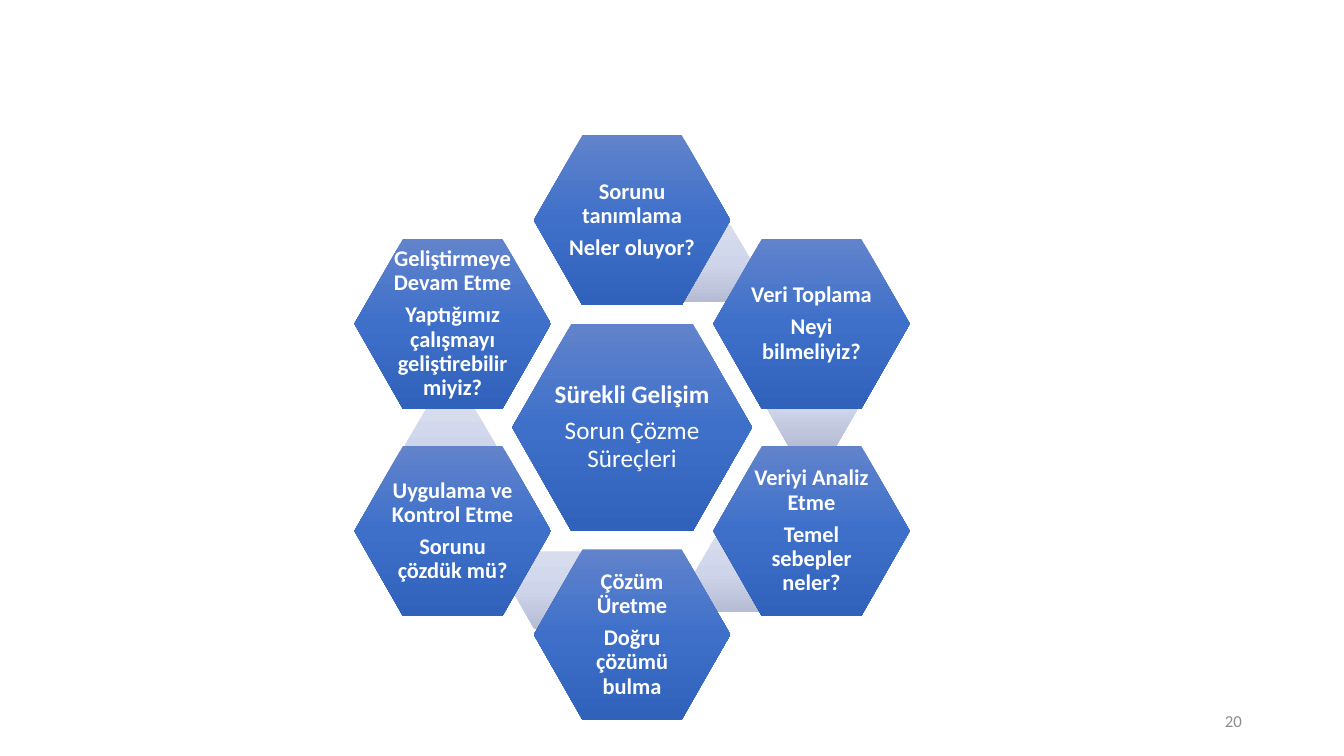
"""Build a slide showing the six-step continuous improvement cycle around its core."""
from copy import deepcopy
from dataclasses import dataclass
from math import cos, radians, sin

from pptx import Presentation
from pptx.dml.color import RGBColor
from pptx.enum.shapes import MSO_SHAPE
from pptx.enum.text import MSO_ANCHOR, PP_ALIGN
from pptx.oxml.ns import qn
from pptx.shapes.autoshape import Shape
from pptx.slide import Slide
from pptx.text.text import TextFrame
from pptx.util import Pt

HEXAGON = MSO_SHAPE.HEXAGON
MIDDLE = MSO_ANCHOR.MIDDLE
CENTER, RIGHT = PP_ALIGN.CENTER, PP_ALIGN.RIGHT
FONT = "Calibri"
COLORS = {
    "text": "FFFFFF", "number": "8C8C8C",
    "blue_top": "6183CB", "blue_middle": "3E70CA", "blue_bottom": "3062BB",
    "pale_top": "D8DDEE", "pale_middle": "CED5EB", "pale_bottom": "B5BCD3",
}
CENTER_X, CENTER_Y = 451.5, 305.3
RING_RADIUS = 148
CORE_SIZE = (171.4, 148.2)
STEP_SIZE = (140.4, 121.7)
LINK_SIZE = (64.8, 55.4)


@dataclass(frozen=True)
class Step:
    """A step of the cycle, with its question."""
    name: str
    question: str


@dataclass(frozen=True)
class Link:
    """The centre of a pale hexagon that joins two steps."""
    x: float
    y: float


STEPS = [
    Step("Sorunu tanımlama", "Neler oluyor?"),
    Step("Veri Toplama", "Neyi bilmeliyiz?"),
    Step("Veriyi Analiz Etme", "Temel sebepler neler?"),
    Step("Çözüm Üretme", "Doğru çözümü bulma"),
    Step("Uygulama ve Kontrol Etme", "Sorunu çözdük mü?"),
    Step("Geliştirmeye Devam Etme", "Yaptığımız çalışmayı geliştirebilir miyiz?"),
]
LINKS = [Link(505.4, 188.3), Link(580.3, 292), Link(528.5, 409.3),
         Link(398.2, 421.6), Link(321.8, 317.9)]


def write(frame: TextFrame, text: str, *, size: float, color: str = "text",
          bold: bool = False, align: PP_ALIGN = CENTER,
          line_spacing: float = 0.9, space_after: float = 0) -> None:
    """Write one paragraph, filling the empty first paragraph if there is one."""
    para = frame.paragraphs[0]
    if para.runs:
        para = frame.add_paragraph()
    para.alignment = align
    para.line_spacing = line_spacing
    para.space_after = Pt(space_after)
    span = para.add_run()
    span.text = text
    span.font.name = FONT
    span.font.size = Pt(size)
    span.font.bold = bold
    span.font.color.rgb = RGBColor.from_string(COLORS[color])


def add_hexagon(page: Slide, x: float, y: float, size: tuple[float, float],
                tone: str, adjustment: float = 0.286) -> Shape:
    """Add a hexagon centred on x, y with a vertical three-stop gradient."""
    width, height = size
    hexagon = page.shapes.add_shape(HEXAGON, Pt(x - width / 2), Pt(y - height / 2),
                                    Pt(width), Pt(height))
    hexagon.adjustments[0] = adjustment
    hexagon.shadow.inherit = False
    hexagon.line.fill.background()
    hexagon.fill.gradient()
    hexagon.fill.gradient_angle = 270
    stop_list = next(hexagon.element.iter(qn("a:gsLst")))
    stop_list.append(deepcopy(stop_list[0]))
    parts = ("top", "middle", "bottom")
    for index, (stop, part) in enumerate(zip(hexagon.fill.gradient_stops, parts)):
        stop.position = index / 2
        stop.color.rgb = RGBColor.from_string(COLORS[f"{tone}_{part}"])
    return hexagon


def prepare_frame(frame: TextFrame, inset: float) -> None:
    """Wrap and centre the text vertically, with equal insets."""
    frame.word_wrap = True
    frame.vertical_anchor = MIDDLE
    frame.margin_left = frame.margin_right = Pt(inset)
    frame.margin_top = frame.margin_bottom = Pt(inset)


def add_core(page: Slide) -> None:
    """Add the large hexagon in the middle of the cycle."""
    frame = add_hexagon(page, CENTER_X, CENTER_Y, CORE_SIZE, "blue").text_frame
    prepare_frame(frame, 1.8)
    write(frame, "Sürekli Gelişim", size=18, bold=True, space_after=6.3)
    write(frame, "Sorun Çözme Süreçleri", size=18, space_after=6.3)


def add_step(page: Slide, index: int, step: Step) -> None:
    """Add a step on the ring, clockwise from the top."""
    angle = radians(60 * index - 90)
    x = CENTER_X + RING_RADIUS * cos(angle)
    y = CENTER_Y + RING_RADIUS * sin(angle)
    frame = add_hexagon(page, x, y, STEP_SIZE, "blue").text_frame
    prepare_frame(frame, 1.5)
    for text in (step.name, step.question):
        write(frame, text, size=16, bold=True, space_after=5.6)


def add_page_number(page: Slide, number: str) -> None:
    """Add the page number at the lower right."""
    box = page.shapes.add_textbox(Pt(678.2), Pt(500.4), Pt(216), Pt(28.8))
    prepare_frame(box.text_frame, 3.6)
    box.text_frame.margin_left = box.text_frame.margin_right = Pt(7.2)
    write(box.text_frame, number, size=12, color="number", align=RIGHT, line_spacing=1)


def main() -> None:
    """Build and save the deck."""
    deck = Presentation()
    deck.slide_width, deck.slide_height = Pt(960), Pt(540)
    page = deck.slides.add_slide(deck.slide_layouts.get_by_name("Blank"))
    add_page_number(page, "20")
    add_core(page)
    for link in LINKS:
        add_hexagon(page, link.x, link.y, LINK_SIZE, "pale", 0.289)
    for index, step in enumerate(STEPS):
        add_step(page, index, step)
    deck.save("out.pptx")


if __name__ == "__main__":
    main()
